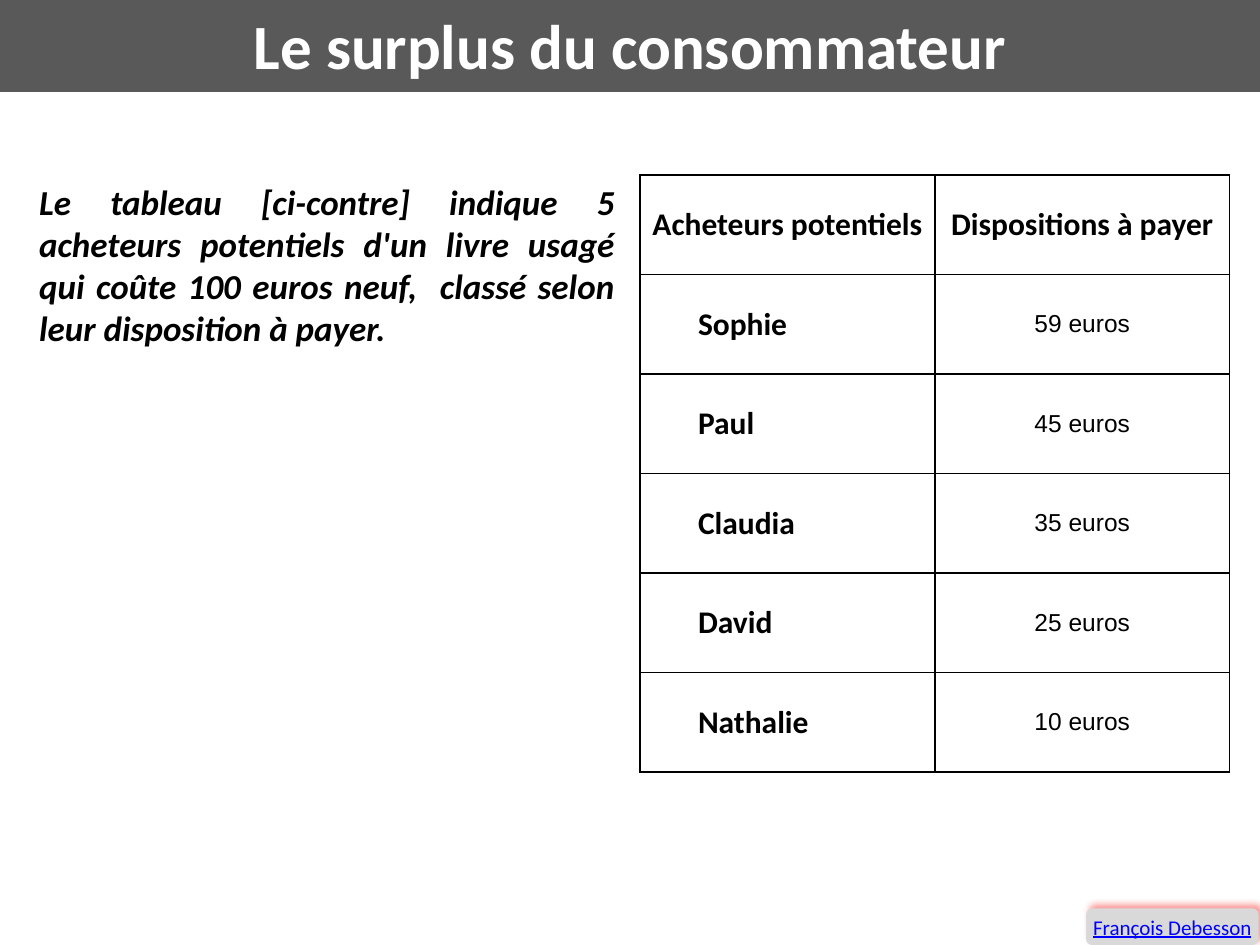
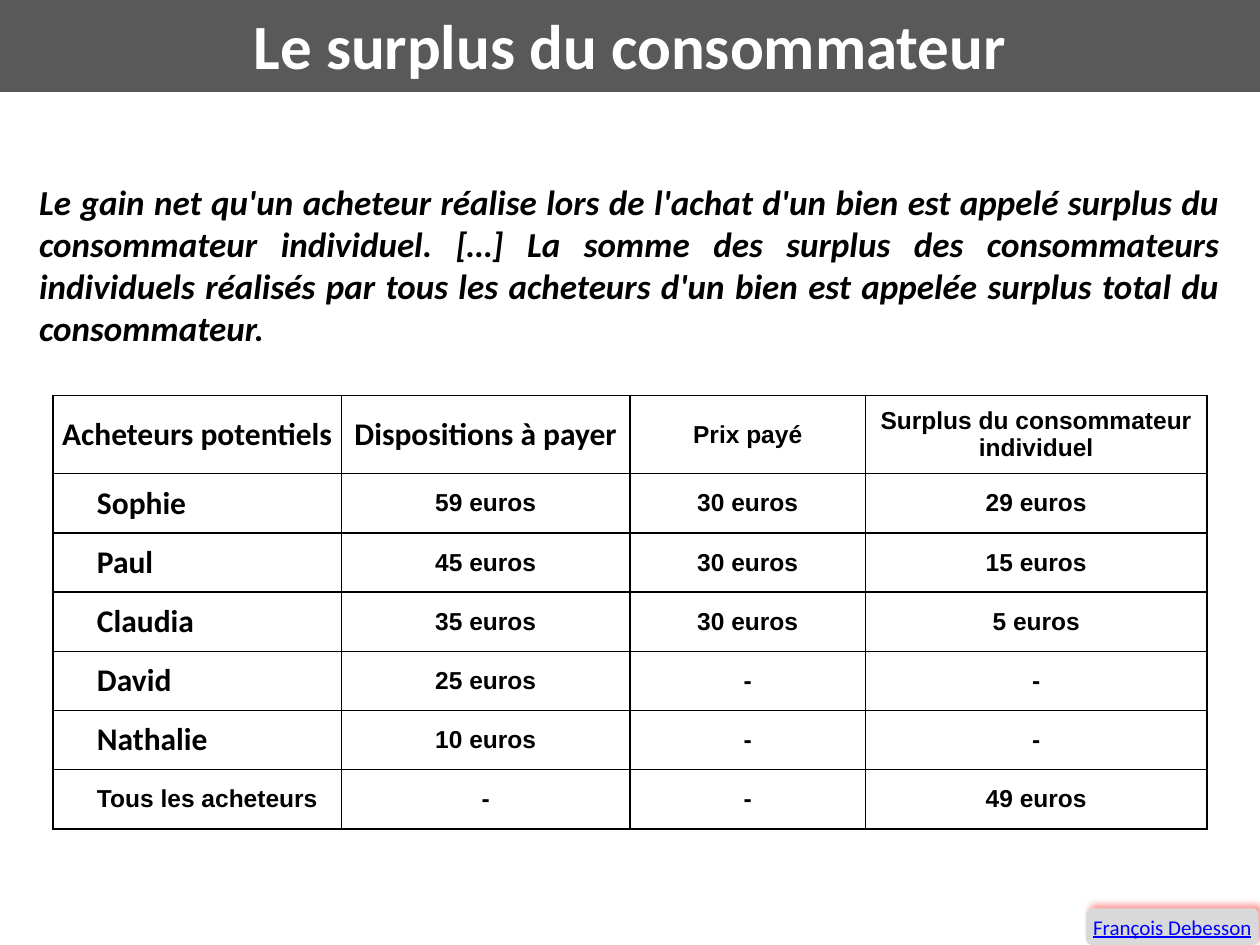
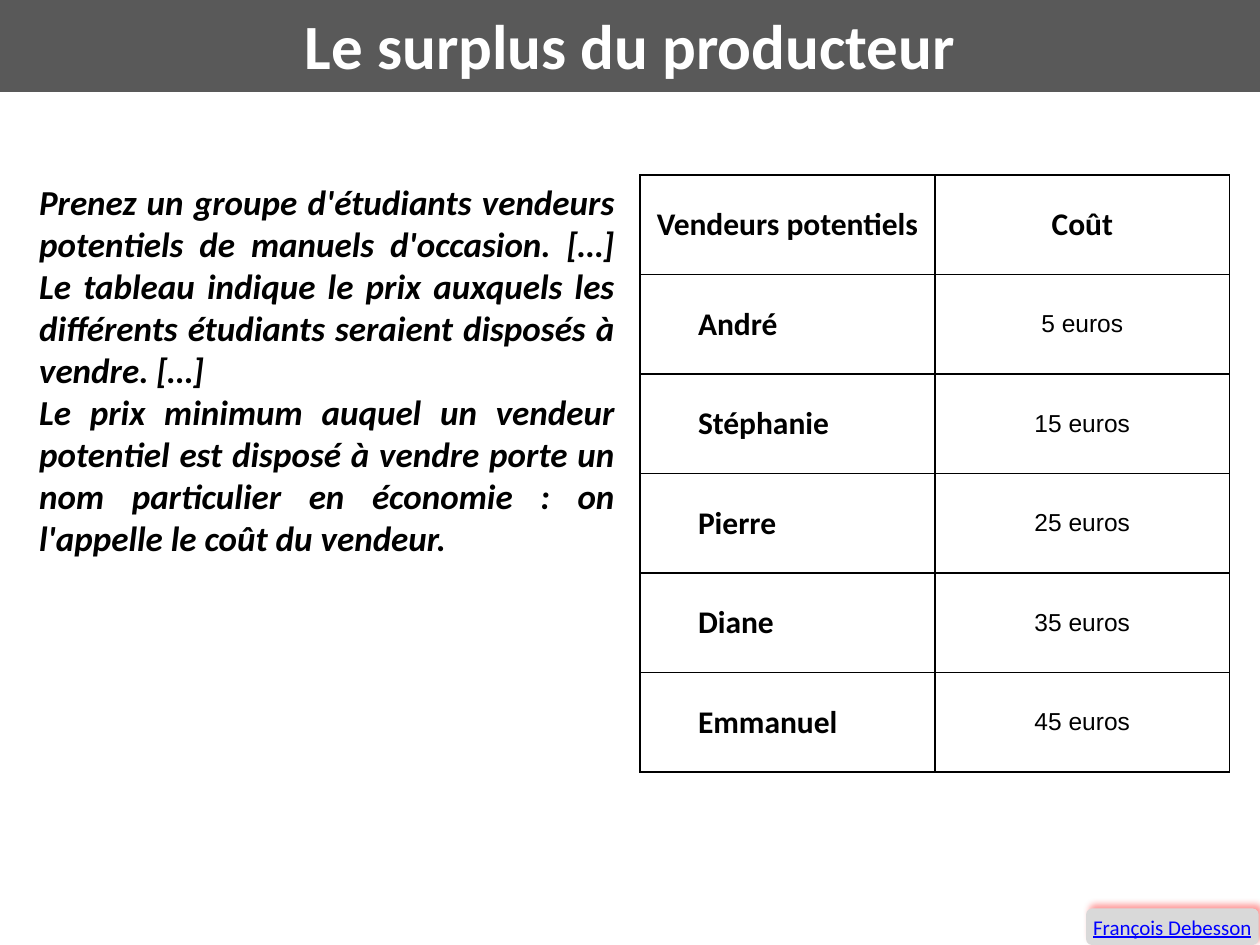
from lxml.etree import SubElement
from pptx import Presentation
from pptx.dml.color import RGBColor
from pptx.enum.shapes import MSO_SHAPE
from pptx.enum.text import MSO_ANCHOR, PP_ALIGN
from pptx.oxml import parse_xml
from pptx.oxml.ns import nsdecls, qn
from pptx.util import Inches, Pt

COLORS = {
    "band": "595959",
    "title": "FFFFFF",
    "text": "000000",
    "badge": "D9D9D9",
    "badge_text": "0000FF",
    "glow": "FF0000",
}
HEAD_FONT, CELL_FONT = "Calibri", "Arial"
AUTHOR = "François Debesson"
TOTAL = "Tous les acheteurs"

TITLE_BOX = (0, -0.03, 10, 0.76)
BADGE_BOX = (8.62, 7.21, 1.37, 0.29)
HALF_TEXT_BOX = (0.27, 1.39, 4.65, 1.43)
WIDE_TEXT_BOX = (0.27, 1.39, 9.45, 1.43)
TALL_TEXT_BOX = (0.27, 1.39, 4.65, 3.11)
SIDE_TABLE = {"left": 5.08, "top": 1.39, "cols": [2.34] * 2,
              "rows": [0.79] * 6, "indent": 0.39, "bold": False}
WIDE_TABLE = {"left": 0.42, "top": 3.14, "cols": [2.29, 2.29, 1.87, 2.71],
              "rows": [0.62] + [0.47] * 6, "indent": 0.28, "bold": True}

SLIDES = [
    {
        "title": "Le surplus du consommateur",
        "text": "Le tableau [ci-contre] indique 5 acheteurs potentiels d'un livre usagé "
                "qui coûte 100 euros neuf,  classé selon leur disposition à payer.",
        "box": HALF_TEXT_BOX,
        "layout": SIDE_TABLE,
        "data": [
            ("Acheteurs potentiels", "Dispositions à payer"),
            ("Sophie", "59 euros"),
            ("Paul", "45 euros"),
            ("Claudia", "35 euros"),
            ("David", "25 euros"),
            ("Nathalie", "10 euros"),
        ],
    },
    {
        "title": "Le surplus du consommateur",
        "text": "Le gain net qu'un acheteur réalise lors de l'achat d'un bien est appelé "
                "surplus du consommateur individuel. […] La somme des surplus des "
                "consommateurs individuels réalisés par tous les acheteurs d'un bien est "
                "appelée surplus total du consommateur.",
        "box": WIDE_TEXT_BOX,
        "layout": WIDE_TABLE,
        "data": [
            ("Acheteurs potentiels", "Dispositions à payer", "Prix payé",
             "Surplus du consommateur\nindividuel"),
            ("Sophie", "59 euros", "30 euros", "29 euros"),
            ("Paul", "45 euros", "30 euros", "15 euros"),
            ("Claudia", "35 euros", "30 euros", "5 euros"),
            ("David", "25 euros", "-", "-"),
            ("Nathalie", "10 euros", "-", "-"),
            (TOTAL, "-", "-", "49 euros"),
        ],
    },
    {
        "title": "Le surplus du producteur",
        "text": "Prenez un groupe d'étudiants vendeurs potentiels de manuels d'occasion. "
                "[…] Le tableau indique le prix auxquels les différents étudiants "
                "seraient disposés à vendre. […]\n"
                "Le prix minimum auquel un vendeur potentiel est disposé à vendre porte "
                "un nom particulier en économie : on l'appelle le coût du vendeur.",
        "box": TALL_TEXT_BOX,
        "layout": SIDE_TABLE,
        "data": [
            ("Vendeurs potentiels", "Coût"),
            ("André", "5 euros"),
            ("Stéphanie", "15 euros"),
            ("Pierre", "25 euros"),
            ("Diane", "35 euros"),
            ("Emmanuel", "45 euros"),
        ],
    },
]


def rgb(name):
    """Return a palette colour."""
    return RGBColor.from_string(COLORS[name])


def write(tf, text, size, color, align, font=HEAD_FONT, bold=False, italic=False,
          underline=False):
    """Fill a text frame and format every run alike."""
    tf.text = text
    for p in tf.paragraphs:
        p.alignment = align
        for r in p.runs:
            f = r.font
            f.name, f.size = font, Pt(size)
            f.bold, f.italic, f.underline = bold, italic, underline
            f.color.rgb = rgb(color)


def set_frame(tf, inset, anchor):
    """Set wrapping, equal insets and the vertical anchor."""
    tf.word_wrap = True
    tf.margin_left = tf.margin_right = tf.margin_top = tf.margin_bottom = Inches(inset)
    tf.vertical_anchor = anchor


def add_block(slide, kind, box, fill, inset):
    """Add a filled shape without outline or shadow."""
    sp = slide.shapes.add_shape(kind, *map(Inches, box))
    sp.fill.solid()
    sp.fill.fore_color.rgb = rgb(fill)
    sp.line.fill.background()
    sp.shadow.inherit = False
    set_frame(sp.text_frame, inset, MSO_ANCHOR.MIDDLE)
    return sp


def add_title(slide, box, text):
    """Add the title band."""
    sp = add_block(slide, MSO_SHAPE.RECTANGLE, box, "band", 0.04)
    write(sp.text_frame, text, 36, "title", PP_ALIGN.CENTER, bold=True)


def add_body(slide, box, text):
    """Add the justified quotation."""
    tf = slide.shapes.add_textbox(*map(Inches, box)).text_frame
    set_frame(tf, 0.04, MSO_ANCHOR.TOP)
    write(tf, text, 20, "text", PP_ALIGN.JUSTIFY, bold=True, italic=True)


def add_badge(slide, box):
    """Add the author badge with its red shadow."""
    sp = add_block(slide, MSO_SHAPE.ROUNDED_RECTANGLE, box, "badge", 0)
    write(sp.text_frame, AUTHOR, 12, "badge_text", PP_ALIGN.CENTER, underline=True)
    effects = sp._element.spPr.find(qn("a:effectLst"))
    effects.append(parse_xml(
        f'<a:outerShdw {nsdecls("a")} blurRad="{Pt(4)}" dist="{Pt(3)}" '
        f'dir="{315 * 60000}" algn="bl" rotWithShape="0">'
        f'<a:srgbClr val="{COLORS["glow"]}"><a:alpha val="40000"/></a:srgbClr>'
        '</a:outerShdw>'))


def set_borders(cell):
    """Draw the four cell borders."""
    tcPr = cell._tc.get_or_add_tcPr()
    for side in ("a:lnL", "a:lnR", "a:lnT", "a:lnB"):
        ln = SubElement(tcPr, qn(side), w=str(Pt(1)))
        fill = SubElement(ln, qn("a:solidFill"))
        SubElement(fill, qn("a:srgbClr"), val=COLORS["text"])


def add_data_table(slide, layout, data):
    """Add a bordered table with indented names and centred values."""
    cols, rows = layout["cols"], layout["rows"]
    box = layout["left"], layout["top"], sum(cols), sum(rows)
    table = slide.shapes.add_table(len(rows), len(cols), *map(Inches, box)).table
    table.first_row = table.horz_banding = False
    for column, width in zip(table.columns, cols):
        column.width = Inches(width)
    for i, (row, height, values) in enumerate(zip(table.rows, rows, data)):
        row.height = Inches(height)
        for j, (cell, value) in enumerate(zip(row.cells, values)):
            name = i > 0 and j == 0
            label = (name and value != TOTAL) or (i == 0 and j < 2)
            write(cell.text_frame, value, 18 if label else 14, "text",
                  PP_ALIGN.LEFT if name else PP_ALIGN.CENTER,
                  font=HEAD_FONT if label else CELL_FONT,
                  bold=label or layout["bold"])
            if name:
                pPr = cell.text_frame.paragraphs[0]._p.get_or_add_pPr()
                pPr.set("marL", str(Inches(layout["indent"])))
            cell.margin_left = cell.margin_right = Inches(0.07)
            cell.margin_top = cell.margin_bottom = 0
            cell.vertical_anchor = MSO_ANCHOR.MIDDLE
            set_borders(cell)
            cell.fill.background()


def add_lesson(prs, title, text, box, layout, data):
    """Add a slide with a title, a quotation, a table and the badge."""
    slide = prs.slides.add_slide(prs.slide_layouts[6])
    add_title(slide, TITLE_BOX, title)
    add_body(slide, box, text)
    add_data_table(slide, layout, data)
    add_badge(slide, BADGE_BOX)


def main():
    """Build and save the presentation."""
    prs = Presentation()
    prs.slide_width, prs.slide_height = Inches(10), Inches(7.5)
    for lesson in SLIDES:
        add_lesson(prs, **lesson)
    prs.save("out.pptx")


if __name__ == "__main__":
    main()
